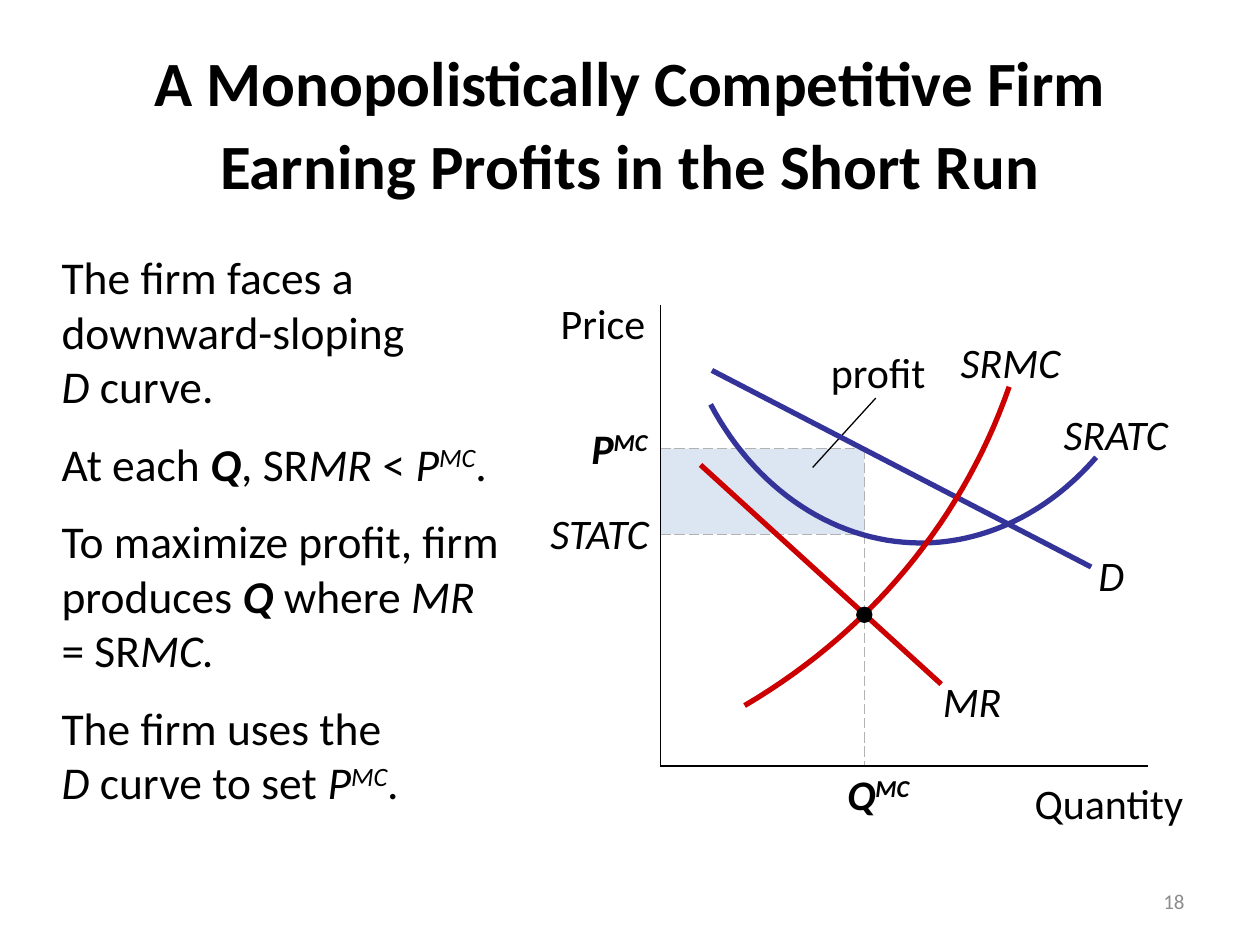
from dataclasses import dataclass

from lxml.etree import SubElement
from pptx import Presentation
from pptx.dml.color import RGBColor
from pptx.enum.dml import MSO_LINE
from pptx.enum.shapes import MSO_CONNECTOR, MSO_SHAPE
from pptx.enum.text import MSO_ANCHOR, PP_ALIGN
from pptx.oxml.ns import qn
from pptx.util import Inches, Pt


@dataclass(frozen=True)
class Theme:
    font: str = "Calibri"
    ink: str = "000000"
    guide: str = "B2B2B2"
    profit: str = "DCE6F2"
    average: str = "333399"
    marginal: str = "CC0000"
    page_number: str = "8C8C8C"
    title_size: int = 36
    body_size: int = 26
    label_size: int = 24
    number_size: int = 12
    thin: float = 0.75
    thick: float = 3
    body_gap: int = 13


@dataclass(frozen=True)
class Span:
    text: str
    italic: bool = False
    bold: bool = False
    raised: bool = False


@dataclass(frozen=True)
class TextBlock:
    frame: tuple[float, float, float, float]
    paras: list[list[Span]]
    align: PP_ALIGN = PP_ALIGN.CENTER
    size: int = 24
    color: str = "000000"
    inset: bool = False
    anchor: MSO_ANCHOR = MSO_ANCHOR.TOP
    spacing: float = 1.0
    wrap: bool = True


@dataclass(frozen=True)
class Segment:
    start: tuple[float, float]
    end: tuple[float, float]
    color: str
    width: float
    dashed: bool = False


@dataclass(frozen=True)
class Curve:
    start: tuple[float, float]
    arcs: list[tuple[tuple[float, float], ...]]
    color: str


THEME = Theme()
LEFT, CENTER, RIGHT = PP_ALIGN.LEFT, PP_ALIGN.CENTER, PP_ALIGN.RIGHT

# Key positions on the graph, in inches
AXIS_X, AXIS_Y = 5.24, 6.08
QUANTITY_X, PRICE_Y, COST_Y, OPTIMUM_Y = 6.86, 3.56, 4.24, 4.88
DOT = 0.13

GUIDES = [
    Segment(start, end, THEME.guide, THEME.thin, dashed=True)
    for start, end in [
        ((AXIS_X, COST_Y), (QUANTITY_X, COST_Y)),
        ((AXIS_X, PRICE_Y), (QUANTITY_X, PRICE_Y)),
        ((QUANTITY_X, PRICE_Y), (QUANTITY_X, AXIS_Y)),
    ]
]
THIN_LINES = [
    Segment(start, end, THEME.ink, THEME.thin)
    for start, end in [
        ((6.45, 3.71), (6.95, 3.16)),
        ((AXIS_X, 2.42), (AXIS_X, AXIS_Y)),
        ((AXIS_X, AXIS_Y), (9.11, AXIS_Y)),
    ]
]
DEMAND = Segment((5.65, 2.94), (8.66, 4.5), THEME.average, THEME.thick)
REVENUE = Segment((5.56, 3.69), (7.47, 5.43), THEME.marginal, THEME.thick)
AVERAGE_COST = Curve(
    (8.7, 3.63),
    [((8.33, 4.06), (7.83, 4.31), (7.31, 4.31)), ((6.63, 4.31), (6.0, 3.89), (5.64, 3.21))],
    THEME.average,
)
MARGINAL_COST = Curve((5.91, 5.6), [((6.9, 5.02), (7.64, 4.13), (8.01, 3.07))], THEME.marginal)

D = Span("D", italic=True)
Q = Span("Q", italic=True, bold=True)
MC_RAISED = Span("MC", italic=True, raised=True)
MC_BOLD = Span("MC", italic=True, bold=True, raised=True)
PRICE_MC = [Span("P", italic=True), MC_RAISED, Span(".")]

TITLE = TextBlock(
    (0.5, 0.29, 9, 1.31),
    [[Span("A Monopolistically Competitive Firm Earning Profits in the Short Run", bold=True)]],
    size=THEME.title_size, inset=True, anchor=MSO_ANCHOR.MIDDLE, spacing=1.1,
)
BODY = TextBlock(
    (0.39, 1.93, 3.71, 5.08),
    [
        [Span("The firm faces a downward-sloping \n"), D, Span(" curve.")],
        [Span("At each "), Q, Span(", SR"), Span("MR", italic=True), Span(" < "), *PRICE_MC],
        [Span("To maximize profit, firm produces "), Q, Span(" where "),
         Span("MR", italic=True), Span(" = SR"), Span("MC.", italic=True)],
        [Span("The firm uses the \n"), D, Span(" curve to set "), *PRICE_MC],
    ],
    align=LEFT, size=THEME.body_size, inset=True,
)
PAGE_NUMBER = TextBlock(
    (7.17, 6.95, 2.33, 0.4), [[Span("18")]], RIGHT, THEME.number_size,
    THEME.page_number, inset=True, anchor=MSO_ANCHOR.MIDDLE,
)
LABELS = [
    TextBlock((6.44, 2.7, 1.06, 0.5), [[Span("profit")]], inset=True),
    TextBlock((4.19, 4.03, 0.96, 0.4), [[Span("STATC", italic=True)]], RIGHT),
    TextBlock((4.59, 3.35, 0.55, 0.4), [[Span("P", italic=True, bold=True), MC_BOLD]],
              RIGHT, wrap=False),
    TextBlock((8.05, 6.17, 1.34, 0.4), [[Span("Quantity")]], RIGHT),
    TextBlock((3.51, 2.31, 1.71, 0.5), [[Span("Price")]], RIGHT, inset=True),
    TextBlock((8.4, 3.24, 0.91, 0.4), [[Span("SRATC", italic=True)]]),
    TextBlock((8.58, 4.36, 0.48, 0.4), [[D]]),
    TextBlock((7.39, 5.36, 0.65, 0.4), [[Span("MR", italic=True)]]),
    TextBlock((7.36, 2.67, 1.32, 0.4), [[Span("SRMC", italic=True)]]),
    TextBlock((6.55, 6.05, 0.84, 0.51), [[Q, MC_BOLD]], inset=True),
]


def add_span(para, span: Span) -> None:
    text, *rest = span.text.split("\n")
    run = para.add_run()
    run.text = text
    run.font.italic, run.font.bold = span.italic, span.bold
    if span.raised:
        run._r.get_or_add_rPr().set("baseline", "30000")
    if rest:
        para.add_line_break()


def add_text(page, block: TextBlock) -> None:
    box = page.shapes.add_textbox(*map(Inches, block.frame))
    frame = box.text_frame
    frame.word_wrap, frame.vertical_anchor = block.wrap, block.anchor
    if not block.inset:
        frame.margin_left = frame.margin_right = frame.margin_top = frame.margin_bottom = 0
    for index, spans in enumerate(block.paras):
        para = frame.add_paragraph() if index else frame.paragraphs[0]
        para.alignment, para.line_spacing = block.align, block.spacing
        para.space_before = Pt(THEME.body_gap if index else 0)
        para.font.name, para.font.size = THEME.font, Pt(block.size)
        para.font.color.rgb = RGBColor.from_string(block.color)
        for span in spans:
            add_span(para, span)


def add_segment(page, segment: Segment) -> None:
    line = page.shapes.add_connector(
        MSO_CONNECTOR.STRAIGHT, *map(Inches, segment.start + segment.end))
    line.line.color.rgb = RGBColor.from_string(segment.color)
    line.line.width = Pt(segment.width)
    if segment.dashed:
        line.line.dash_style = MSO_LINE.LONG_DASH
    SubElement(line._element.spPr, qn("a:effectLst"))


def add_curve(page, curve: Curve, steps: int = 30) -> None:
    """Trace each cubic arc through evenly spaced parameter values."""
    points, start = [], curve.start
    for first, second, end in curve.arcs:
        for t in (step / steps for step in range(1, steps + 1)):
            u = 1 - t
            points.append(tuple(
                Inches(u**3 * a + 3 * u * u * t * b + 3 * u * t * t * c + t**3 * d)
                for a, b, c, d in zip(start, first, second, end)))
        start = end
    builder = page.shapes.build_freeform(*map(Inches, curve.start))
    builder.add_line_segments(points, close=False)
    shape = builder.convert_to_shape()
    shape.shadow.inherit = False
    shape.fill.background()
    shape.line.color.rgb = RGBColor.from_string(curve.color)
    shape.line.width = Pt(THEME.thick)


def add_solid(page, kind: MSO_SHAPE, frame: tuple[float, ...], color: str) -> None:
    shape = page.shapes.add_shape(kind, *map(Inches, frame))
    shape.shadow.inherit = False
    shape.fill.solid()
    shape.fill.fore_color.rgb = RGBColor.from_string(color)
    shape.line.fill.background()


def main() -> None:
    deck = Presentation()
    deck.slide_width, deck.slide_height = Inches(10), Inches(7.5)
    page = deck.slides.add_slide(deck.slide_layouts[6])
    # Profit area, guides and axes
    add_solid(page, MSO_SHAPE.RECTANGLE,
              (AXIS_X, PRICE_Y, QUANTITY_X - AXIS_X, COST_Y - PRICE_Y), THEME.profit)
    for segment in GUIDES + THIN_LINES:
        add_segment(page, segment)
    # Curves and the profit-maximizing point
    add_curve(page, AVERAGE_COST)
    add_segment(page, DEMAND)
    add_segment(page, REVENUE)
    add_curve(page, MARGINAL_COST)
    add_solid(page, MSO_SHAPE.OVAL,
              (QUANTITY_X - DOT / 2, OPTIMUM_Y - DOT / 2, DOT, DOT), THEME.ink)
    # Wording
    for block in [TITLE, BODY, *LABELS, PAGE_NUMBER]:
        add_text(page, block)
    deck.save("out.pptx")


if __name__ == "__main__":
    main()
